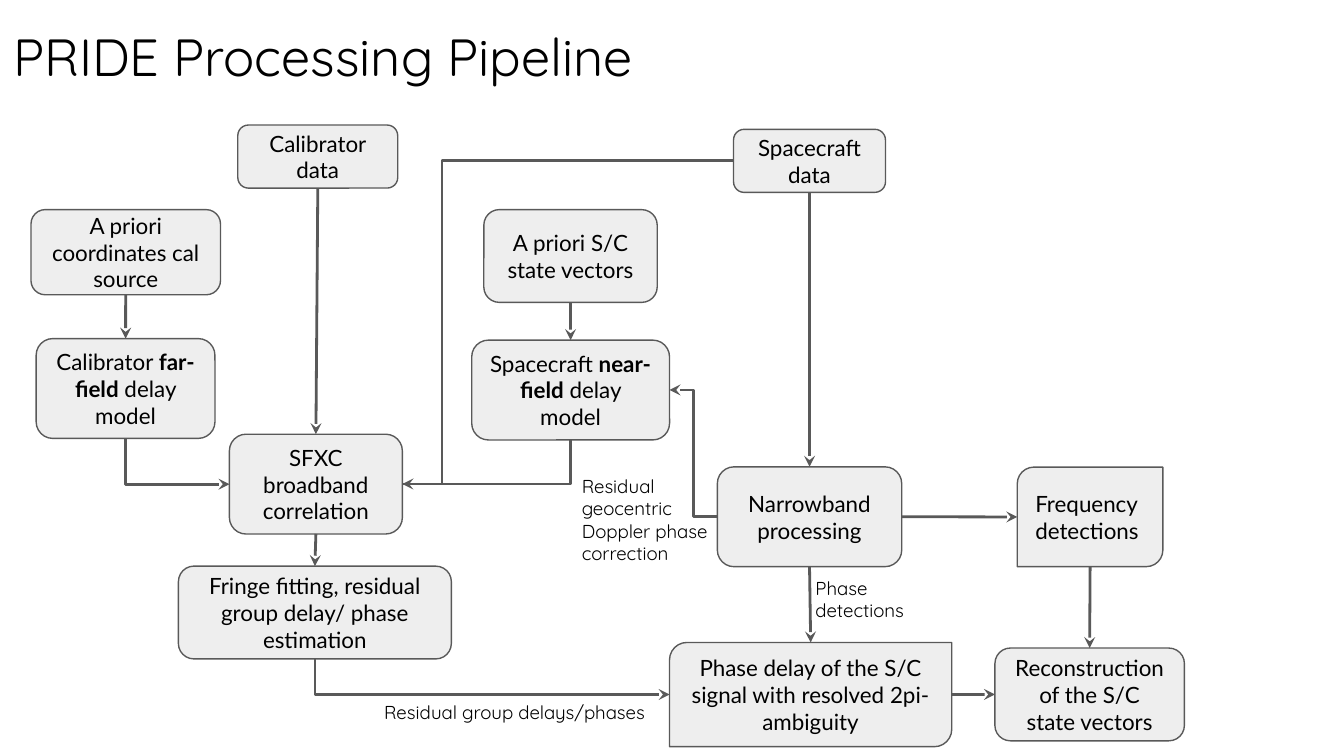
from pptx import Presentation
from pptx.dml.color import RGBColor
from pptx.enum.shapes import MSO_CONNECTOR, MSO_SHAPE
from pptx.enum.text import MSO_ANCHOR, PP_ALIGN
from pptx.oxml.ns import qn
from pptx.util import Pt
from lxml import etree

STRAIGHT, ELBOW = MSO_CONNECTOR.STRAIGHT, MSO_CONNECTOR.ELBOW
ROUNDED = MSO_SHAPE.ROUNDED_RECTANGLE
DIAGONAL = MSO_SHAPE.ROUND_2_DIAG_RECTANGLE
MIDDLE, CENTER, LEFT = MSO_ANCHOR.MIDDLE, PP_ALIGN.CENTER, PP_ALIGN.LEFT
TOP_SIDE, LEFT_SIDE, BOTTOM_SIDE, RIGHT_SIDE = range(4)
BLACK, GREY, PALE = "000000", "595959", "EEEEEE"

BOXES = {
    "calibrator coordinates": ("A priori coordinates cal source", 16.6, 112.3, 101.5, 45.6),
    "state vectors": ("A priori S/C state vectors", 259.2, 112.3, 92.9, 49.7),
    "far model": ("Calibrator *far-field* delay model", 19.4, 181.4, 95.8, 53.5),
    "near model": ("Spacecraft *near-field* delay model", 252.7, 182.2, 106, 53.5),
    "correlation": ("SFXC broadband correlation", 122.9, 232.6, 92.7, 53.5),
    "calibrator data": ("Calibrator data", 127.4, 67, 85.7, 33.8),
    "spacecraft data": ("Spacecraft data", 393, 69.3, 81.4, 33.8),
    "narrowband": ("Narrowband processing", 384.3, 250.1, 98.8, 53.5),
    "fringe": ("Fringe fitting, residual group delay/ phase estimation", 95.6, 303.3, 146.2, 49.7),
    "reconstruction": ("Reconstruction of the S/C state vectors", 533, 347.2, 101.5, 49.7),
}
OUTPUTS = {
    "phase delay": ("Phase delay of the S/C signal with resolved 2pi-ambiguity", 358.7, 344.2, 151.2, 55.8),
    "frequency": ("Frequency detections", 545, 250.3, 78, 53.3),
}
ARROWS = [
    ("calibrator coordinates", BOTTOM_SIDE, "far model", TOP_SIDE),
    ("calibrator data", BOTTOM_SIDE, "correlation", TOP_SIDE),
    ("state vectors", BOTTOM_SIDE, "near model", TOP_SIDE),
    ("spacecraft data", BOTTOM_SIDE, "narrowband", TOP_SIDE),
    ("correlation", BOTTOM_SIDE, "fringe", TOP_SIDE),
    ("narrowband", BOTTOM_SIDE, "phase delay", TOP_SIDE),
    ("narrowband", RIGHT_SIDE, "frequency", LEFT_SIDE),
    ("phase delay", RIGHT_SIDE, "reconstruction", LEFT_SIDE),
    ("frequency", BOTTOM_SIDE, "reconstruction", TOP_SIDE),
]
LABELS = [
    (["Residual geocentric", "Doppler phase correction"], 304.6, 247, 92.9, 33.8),
    (["Residual group delays/phases"], 198.7, 369.4, 174.2, 27.4),
    (["Phase", "detections"], 429.8, 301.7, 105.8, 20.2),
]


def color(value):
    """Turn a hex string into a colour."""
    return RGBColor.from_string(value)


def style_font(paragraph, name, size):
    """Set the font of a whole paragraph."""
    font = paragraph.font
    font.name, font.size = name, Pt(size)
    font.color.rgb = color(BLACK)


def set_margins(frame):
    """Wrap the text and give it equal insets."""
    frame.word_wrap = True
    frame.margin_left = frame.margin_right = Pt(7.2)
    frame.margin_top = frame.margin_bottom = Pt(7.2)


def add_label(slide, lines, left, top, width, height, size=10):
    """Add a plain text box with one paragraph per line."""
    frame = slide.shapes.add_textbox(Pt(left), Pt(top), Pt(width), Pt(height)).text_frame
    set_margins(frame)
    frame.text = "\n".join(lines)
    for paragraph in frame.paragraphs:
        style_font(paragraph, "Quicksand", size)


def add_box(slide, kind, text, left, top, width, height, alignment=CENTER):
    """Add a process box; words between asterisks are bold."""
    shape = slide.shapes.add_shape(kind, Pt(left), Pt(top), Pt(width), Pt(height))
    shape.shadow.inherit = False
    shape.adjustments[0] = 0.167
    shape.fill.solid()
    shape.fill.fore_color.rgb = color(PALE)
    shape.line.color.rgb = color(GREY)
    shape.line.width = Pt(0.75)
    frame = shape.text_frame
    set_margins(frame)
    frame.vertical_anchor = MIDDLE
    paragraph = frame.paragraphs[0]
    paragraph.alignment = alignment
    style_font(paragraph, "Lato", 12)
    for index, part in enumerate(text.split("*")):
        run = paragraph.add_run()
        run.text = part
        if index % 2:
            run.font.bold = True
    return shape


def side_point(shape, side):
    """Return the middle of a side of a shape."""
    across = {LEFT_SIDE: 0, RIGHT_SIDE: 2}.get(side, 1)
    down = {TOP_SIDE: 0, BOTTOM_SIDE: 2}.get(side, 1)
    return shape.left + shape.width * across // 2, shape.top + shape.height * down // 2


def add_line(slide, kind, start, end, head=True):
    """Add a grey connector, with an arrowhead at its end if wanted."""
    connector = slide.shapes.add_connector(kind, *start, *end)
    connector.line.color.rgb = color(GREY)
    connector.line.width = Pt(1.5)
    properties = connector._element.spPr
    if head:
        etree.SubElement(properties.find(qn("a:ln")), qn("a:tailEnd"), type="stealth")
    etree.SubElement(properties, qn("a:effectLst"))
    return connector


def add_arrow(slide, source, source_side, target, target_side):
    """Add a straight arrow and join it to the rounded rectangles."""
    connector = add_line(slide, STRAIGHT, side_point(source, source_side), side_point(target, target_side))
    if source.auto_shape_type == ROUNDED:
        connector.begin_connect(source, source_side)
    if target.auto_shape_type == ROUNDED:
        connector.end_connect(target, target_side)


def add_corner(slide, start, end):
    """Add an arrow that runs down and then sideways."""
    width, height = abs(end[0] - start[0]), end[1] - start[1]
    left = (start[0] + end[0] - height) // 2
    top = (start[1] + end[1] - width) // 2
    connector = add_line(slide, ELBOW, (left, top), (left + height, top + width))
    properties = connector._element.spPr
    properties.find(qn("a:prstGeom")).set("prst", "bentConnector2")
    frame = properties.find(qn("a:xfrm"))
    if end[0] > start[0]:
        frame.set("rot", str(270 * 60000))
        frame.set("flipH", "1")
    else:
        frame.set("rot", str(90 * 60000))


def set_bend(connector, share):
    """Place the bend of an elbow at a share of its width."""
    geometry = connector._element.spPr.find(qn("a:prstGeom"))
    guides = geometry.find(qn("a:avLst"))
    if guides is None:
        guides = etree.SubElement(geometry, qn("a:avLst"))
    etree.SubElement(guides, qn("a:gd"), name="adj1", fmla=f"val {round(share * 100000)}")


def main():
    """Build the pipeline slide."""
    presentation = Presentation()
    presentation.slide_width, presentation.slide_height = Pt(720), Pt(405)
    slide = presentation.slides.add_slide(presentation.slide_layouts[6])
    add_label(slide, ["PRIDE Processing Pipeline"], 0, 5.8, 671, 45.4, 28)
    shapes = {name: add_box(slide, ROUNDED, *box) for name, box in BOXES.items()}
    for name, box in OUTPUTS.items():
        alignment = LEFT if name == "frequency" else CENTER
        shapes[name] = add_box(slide, DIAGONAL, *box, alignment)
    for source, source_side, target, target_side in ARROWS:
        add_arrow(slide, shapes[source], source_side, shapes[target], target_side)
    for source, target, side in [("far model", "correlation", LEFT_SIDE),
                                 ("near model", "correlation", RIGHT_SIDE),
                                 ("fringe", "phase delay", LEFT_SIDE)]:
        add_corner(slide, side_point(shapes[source], BOTTOM_SIDE), side_point(shapes[target], side))
    add_line(slide, ELBOW, side_point(shapes["narrowband"], LEFT_SIDE),
             side_point(shapes["near model"], RIGHT_SIDE))
    data_line = add_line(slide, ELBOW, side_point(shapes["spacecraft data"], LEFT_SIDE),
                         side_point(shapes["correlation"], RIGHT_SIDE), head=False)
    set_bend(data_line, 0.88)
    for label in LABELS:
        add_label(slide, *label)
    presentation.save("out.pptx")


if __name__ == "__main__":
    main()
